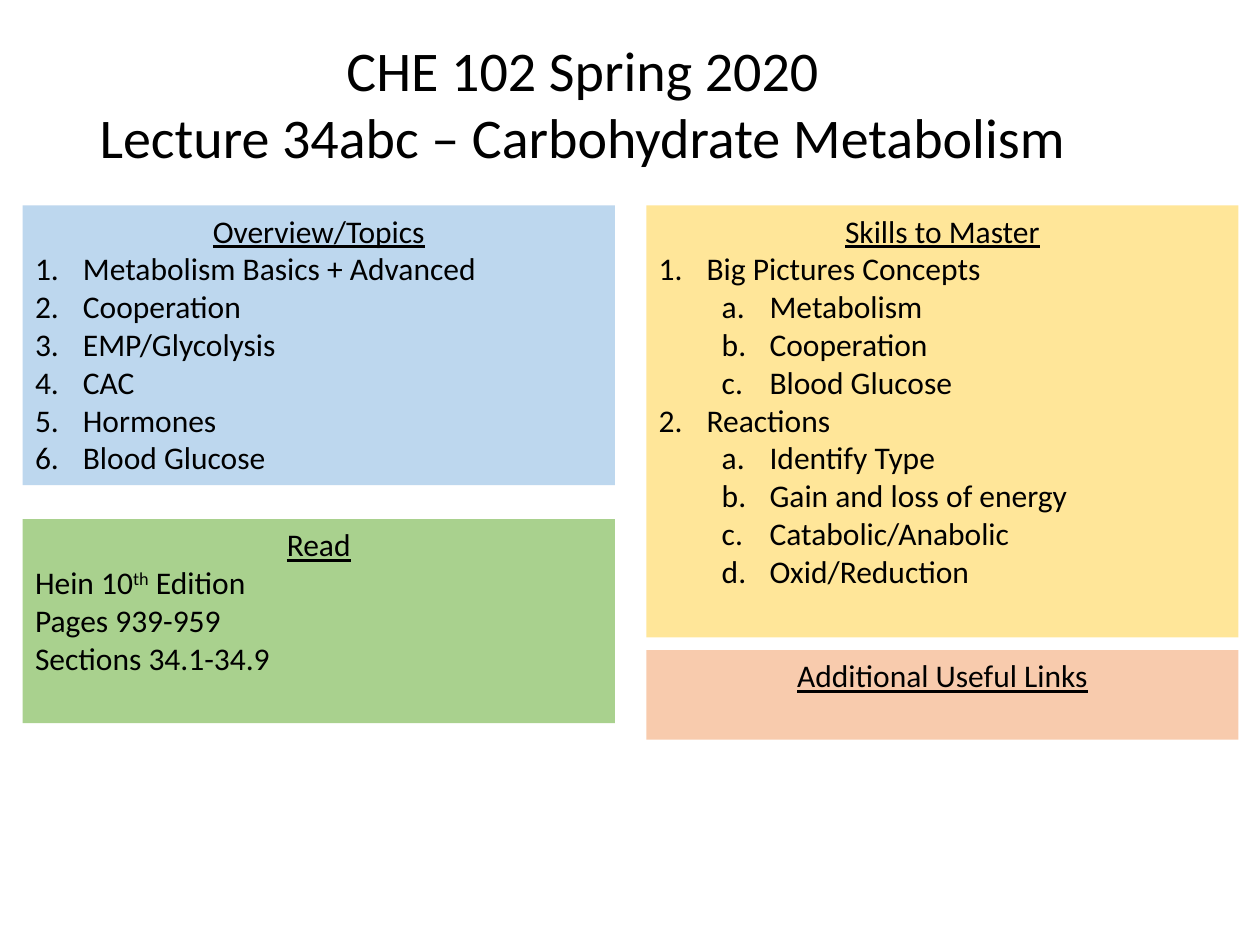
from lxml.etree import SubElement
from pptx import Presentation
from pptx.dml.color import RGBColor
from pptx.enum.shapes import MSO_SHAPE
from pptx.enum.text import MSO_ANCHOR, PP_ALIGN
from pptx.oxml.ns import qn
from pptx.util import Inches, Pt

BODY = {"name": "Calibri", "size": Pt(18)}
HEADING = {**BODY, "underline": True}
TITLE = {**BODY, "size": Pt(32)}
NUMBERING = ["arabicPeriod", "alphaLcPeriod"]
HANGING = 0.38
LEFT_COLUMN, RIGHT_COLUMN, COLUMN_WIDTH = 0.18, 5.13, 4.7

TOPICS = ["Metabolism Basics + Advanced", "Cooperation", "EMP/Glycolysis",
          "CAC", "Hormones", "Blood Glucose"]
SKILLS = {
    "Big Pictures Concepts": ["Metabolism", "Cooperation", "Blood Glucose"],
    "Reactions": ["Identify Type", "Gain and loss of energy",
                  "Catabolic/Anabolic", "Oxid/Reduction"],
}


def set_color(color_format, hex_color):
    color_format.rgb = RGBColor.from_string(hex_color)


def add_run(paragraph, text, style, superscript=False):
    run = paragraph.add_run()
    run.text = text
    for attribute, value in style.items():
        setattr(run.font, attribute, value)
    set_color(run.font.color, "000000")
    if superscript:
        run._r.get_or_add_rPr().set("baseline", "30000")


def add_line(frame, text, style=BODY, align=PP_ALIGN.LEFT):
    paragraph = frame.paragraphs[0]
    if paragraph.runs:
        paragraph = frame.add_paragraph()
    paragraph.alignment = align
    add_run(paragraph, text, style)
    return paragraph


def add_numbered(frame, text, level=0):
    paragraph = add_line(frame, text)
    paragraph.level = level
    properties = paragraph._p.get_or_add_pPr()
    properties.set("marL", str(Inches(HANGING + 0.5 * level)))
    properties.set("indent", str(-Inches(HANGING)))
    SubElement(properties, qn("a:buFont"), typeface="+mj-lt")
    SubElement(properties, qn("a:buAutoNum"), type=NUMBERING[level])


def add_panel(slide, heading, left, top, height, fill):
    panel = slide.shapes.add_shape(MSO_SHAPE.RECTANGLE, Inches(left), Inches(top),
                                   Inches(COLUMN_WIDTH), Inches(height))
    panel.shadow.inherit = False
    panel.fill.solid()
    set_color(panel.fill.fore_color, fill)
    panel.line.fill.background()
    frame = panel.text_frame
    frame.word_wrap = True
    frame.vertical_anchor = MSO_ANCHOR.TOP
    add_line(frame, heading, HEADING, PP_ALIGN.CENTER)
    return frame


def add_title(slide, lines):
    title = slide.shapes.add_textbox(Inches(0.65), Inches(0.23), Inches(7.95), Inches(1.18))
    title.text_frame.word_wrap = False
    for line in lines:
        add_line(title.text_frame, line, TITLE, PP_ALIGN.CENTER)


def main():
    deck = Presentation()
    deck.slide_width, deck.slide_height = Inches(10), Inches(7.5)
    slide = deck.slides.add_slide(deck.slide_layouts[6])

    overview = add_panel(slide, "Overview/Topics", LEFT_COLUMN, 1.63, 2.22, "BDD7EE")
    for topic in TOPICS:
        add_numbered(overview, topic)

    skills = add_panel(slide, "Skills to Master", RIGHT_COLUMN, 1.63, 3.43, "FFE699")
    for skill, details in SKILLS.items():
        add_numbered(skills, skill)
        for detail in details:
            add_numbered(skills, detail, level=1)

    reading = add_panel(slide, "Read", LEFT_COLUMN, 4.12, 1.62, "A9D18E")
    edition = add_line(reading, "Hein 10")
    add_run(edition, "th", BODY, superscript=True)
    add_run(edition, " Edition", BODY)
    for reference in ["Pages 939-959", "Sections 34.1-34.9"]:
        add_line(reading, reference)

    add_panel(slide, "Additional Useful Links", RIGHT_COLUMN, 5.16, 0.71, "F8CBAD")
    add_title(slide, ["CHE 102 Spring 2020", "Lecture 34abc – Carbohydrate Metabolism"])
    deck.save("out.pptx")


if __name__ == "__main__":
    main()
